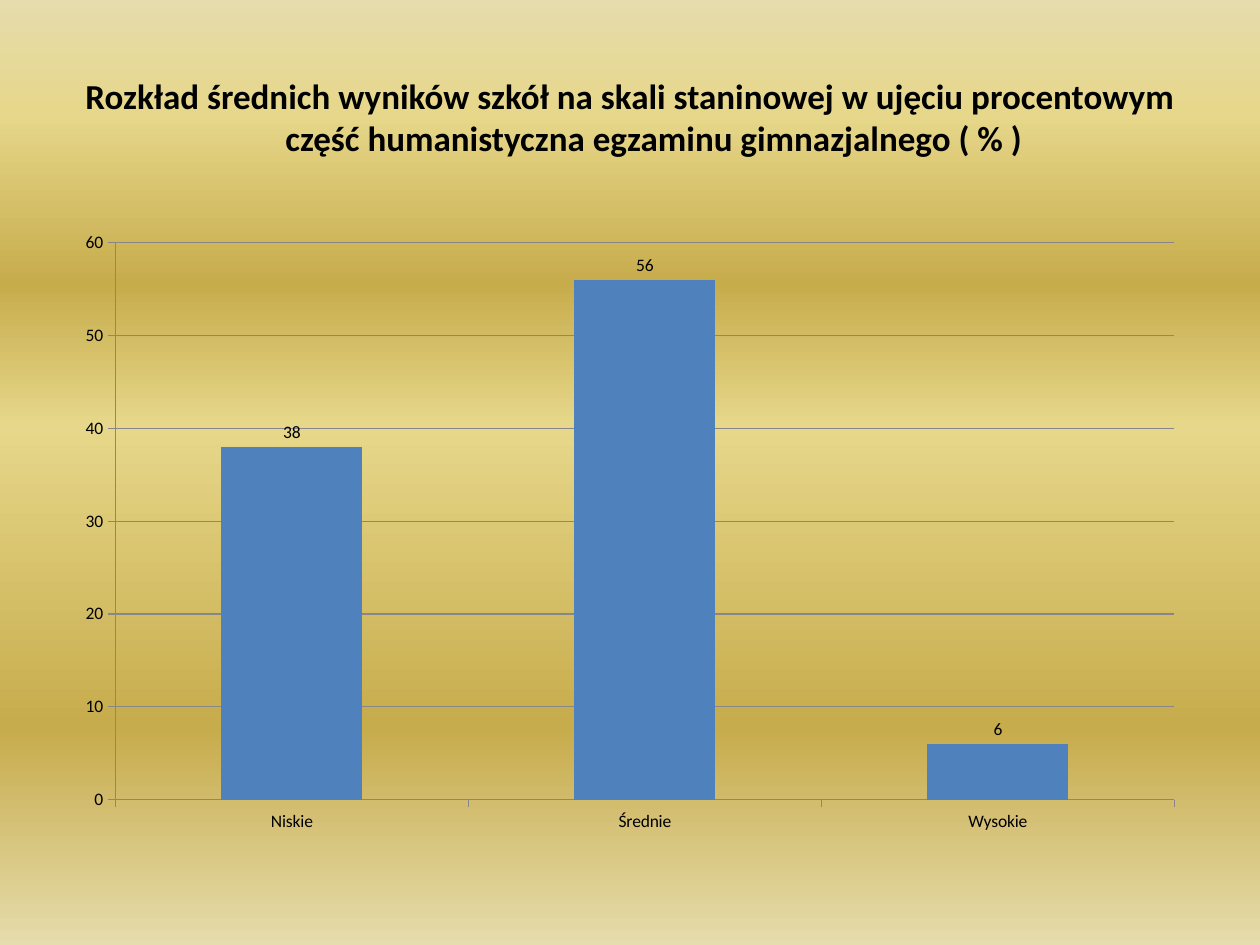
import pptx
import pptx.chart.data
import pptx.dml.color
import pptx.enum.chart
import pptx.enum.text
import pptx.oxml
import pptx.oxml.ns
import pptx.util
from pptx.util import Inches

TITLE = ("Rozkład średnich wyników szkół na skali staninowej w ujęciu procentowym "
         "część humanistyczna egzaminu gimnazjalnego ( % )")
RESULTS = {"Niskie": 38, "Średnie": 56, "Wysokie": 6}
GRADIENT = [(0, "E6DCAC"), (12, "E6D78A"), (30, "C7AC4C"),
            (45, "E6D78A"), (77, "C7AC4C"), (100, "E6DCAC")]
FONT, BLACK, BAR, LINE = "Calibri", "000000", "4F81BD", "878787"
MARGIN, WIDTH = 0.5, 9


def color(value):
    return pptx.dml.color.RGBColor.from_string(value)


def style_font(font, size, bold=False):
    font.name, font.size, font.bold = FONT, pptx.util.Pt(size), bold
    font.color.rgb = color(BLACK)


def paint_background(slide, stops):
    """Fill the background with a top-to-bottom gradient of any number of stops."""
    fill = slide.background.fill
    fill.gradient()
    fill.gradient_angle = 270
    stop_list = slide.background._cSld.find(".//" + pptx.oxml.ns.qn("a:gsLst"))
    for stop in list(stop_list):
        stop_list.remove(stop)
    for percent, value in stops:
        stop_list.append(pptx.oxml.parse_xml(
            f'<a:gs {pptx.oxml.ns.nsdecls("a")} pos="{percent * 1000}">'
            f'<a:srgbClr val="{value}"/></a:gs>'))


def add_text(slide, text, *, top, height, size, bold=False, hanging=0):
    frame = slide.shapes.add_textbox(
        Inches(MARGIN), Inches(top), Inches(WIDTH), Inches(height)).text_frame
    frame.word_wrap = True
    frame.vertical_anchor = pptx.enum.text.MSO_ANCHOR.MIDDLE
    paragraph = frame.paragraphs[0]
    paragraph.alignment = pptx.enum.text.PP_ALIGN.CENTER
    properties = paragraph._p.get_or_add_pPr()
    properties.set("marL", str(Inches(hanging)))
    properties.set("indent", str(-Inches(hanging)))
    run = paragraph.add_run()
    run.text = text
    style_font(run.font, size, bold)


def style_axis(axis):
    axis.major_tick_mark = pptx.enum.chart.XL_TICK_MARK.OUTSIDE
    axis.minor_tick_mark = pptx.enum.chart.XL_TICK_MARK.NONE
    axis.format.line.color.rgb = color(LINE)
    style_font(axis.tick_labels.font, 10)


def add_results_chart(slide, results, top, height):
    data = pptx.chart.data.CategoryChartData()
    data.categories = list(results)
    data.add_series("Series 1", list(results.values()))
    chart = slide.shapes.add_chart(
        pptx.enum.chart.XL_CHART_TYPE.COLUMN_CLUSTERED,
        Inches(MARGIN), Inches(top), Inches(WIDTH), Inches(height), data).chart
    chart.has_title = chart.has_legend = False
    style_font(chart.font, 10)

    style_axis(chart.category_axis)
    scale = chart.value_axis
    style_axis(scale)
    scale.minimum_scale, scale.maximum_scale, scale.major_unit = 0, 60, 10
    scale.has_major_gridlines = True
    scale.major_gridlines.format.line.color.rgb = color(LINE)

    plot = chart.plots[0]
    plot.gap_width, plot.vary_by_categories = 150, False
    bars = plot.series[0]
    bars.format.fill.solid()
    bars.format.fill.fore_color.rgb = color(BAR)
    labels = bars.data_labels
    labels.show_value = True
    labels.position = pptx.enum.chart.XL_LABEL_POSITION.OUTSIDE_END
    style_font(labels.font, 10)


def main():
    deck = pptx.Presentation()
    deck.slide_width, deck.slide_height = Inches(10), Inches(7.5)
    slide = deck.slides.add_slide(deck.slide_layouts[6])
    paint_background(slide, GRADIENT)
    add_text(slide, TITLE, top=0.3, height=1.25, size=20, bold=True, hanging=0.38)
    add_results_chart(slide, RESULTS, top=1.75, height=4.95)
    deck.save("out.pptx")


if __name__ == "__main__":
    main()
